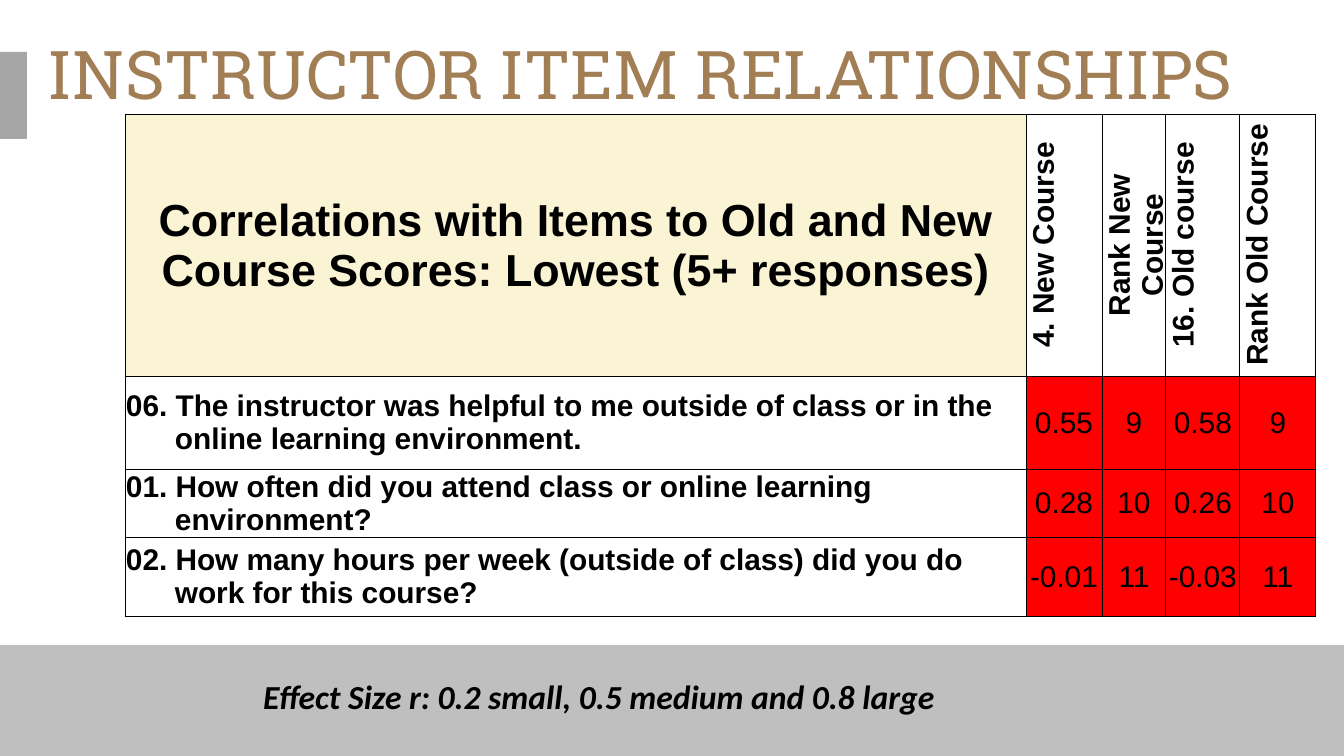
from dataclasses import dataclass

from lxml.etree import SubElement
from pptx import Presentation
from pptx.dml.color import RGBColor
from pptx.enum.shapes import MSO_SHAPE
from pptx.enum.text import MSO_ANCHOR, PP_ALIGN
from pptx.oxml import parse_xml
from pptx.oxml.ns import nsdecls, qn
from pptx.util import Emu, Pt

EMU_PER_PX = 6804
BLACK = RGBColor(0x00, 0x00, 0x00)
WHITE = RGBColor(0xFF, 0xFF, 0xFF)
RED = RGBColor(0xFF, 0x00, 0x00)
CREAM = RGBColor(0xFA, 0xF3, 0xD4)
BRONZE = RGBColor(0xA2, 0x7E, 0x55)
LIGHT_GREY = RGBColor(0xBF, 0xBF, 0xBF)
MID_GREY = RGBColor(0xA6, 0xA6, 0xA6)

COLUMN_WIDTHS = (901, 76, 64, 74, 76)
ROW_HEIGHTS = (262, 93, 68, 79)
ITEM_INDENT = 49
CELL_MARGIN = 1
TABLE_HEADING = "Correlations with Items to Old and New Course Scores: Lowest (5+ responses)"
SCORE_HEADINGS = ("4. New Course", "Rank New\vCourse", "16. Old course", "Rank Old Course")


@dataclass(frozen=True)
class Box:
    left: int
    top: int
    width: int
    height: int

    def lengths(self) -> tuple:
        return tuple(px(n) for n in (self.left, self.top, self.width, self.height))


@dataclass(frozen=True)
class SurveyItem:
    question: str
    scores: tuple


ITEMS = (
    SurveyItem("06. The instructor was helpful to me outside of class or in the "
               "online learning environment.", ("0.55", "9", "0.58", "9")),
    SurveyItem("01. How often did you attend class or online learning environment?",
               ("0.28", "10", "0.26", "10")),
    SurveyItem("02. How many hours per week (outside of class) did you do "
               "work for this course?", ("-0.01", "11", "-0.03", "11")),
)


def px(length: int) -> Emu:
    return Emu(length * EMU_PER_PX)


def write_text(frame, text: str, *, size: int, font: str = "Arial",
               color: RGBColor = BLACK, bold: bool = False, italic: bool = False,
               align=PP_ALIGN.LEFT, hanging: int = 0) -> None:
    frame.text = text
    paragraph = frame.paragraphs[0]
    paragraph.alignment = align
    if hanging:
        properties = paragraph._p.get_or_add_pPr()
        properties.set("marL", str(px(hanging)))
        properties.set("indent", str(-px(hanging)))
    for run in paragraph.runs:
        run.font.name = font
        run.font.size = Pt(size)
        run.font.bold = bold
        run.font.italic = italic
        run.font.color.rgb = color


def clear_margins(frame) -> None:
    frame.margin_left = frame.margin_right = 0
    frame.margin_top = frame.margin_bottom = 0


def add_bar(slide, box: Box, color: RGBColor) -> None:
    bar = slide.shapes.add_shape(MSO_SHAPE.RECTANGLE, *box.lengths())
    bar.shadow.inherit = False
    bar.fill.solid()
    bar.fill.fore_color.rgb = color
    bar.line.fill.background()


def add_borders(cell) -> None:
    properties = cell._tc.get_or_add_tcPr()
    for position, side in enumerate(("lnL", "lnR", "lnT", "lnB")):
        line = parse_xml(f'<a:{side} {nsdecls("a")} w="{Pt(0.5)}"/>')
        fill = SubElement(line, qn("a:solidFill"))
        SubElement(fill, qn("a:srgbClr"), val=str(BLACK))
        properties.insert(position, line)


def fill_cell(cell, text: str, fill: RGBColor, *, upward: bool = False, **text_format) -> None:
    cell.margin_left = cell.margin_right = cell.margin_top = px(CELL_MARGIN)
    cell.margin_bottom = 0
    cell.vertical_anchor = MSO_ANCHOR.MIDDLE
    cell.fill.solid()
    cell.fill.fore_color.rgb = fill
    if upward:
        cell._tc.get_or_add_tcPr().set("vert", "vert270")
    add_borders(cell)
    write_text(cell.text_frame, text, **text_format)


def add_correlation_table(slide) -> None:
    box = Box(125, 114, sum(COLUMN_WIDTHS), sum(ROW_HEIGHTS))
    table = slide.shapes.add_table(len(ROW_HEIGHTS), len(COLUMN_WIDTHS), *box.lengths()).table
    table.first_row = table.horz_banding = False
    for column, width in zip(table.columns, COLUMN_WIDTHS):
        column.width = px(width)
    for row, height in zip(table.rows, ROW_HEIGHTS):
        row.height = px(height)

    fill_cell(table.cell(0, 0), TABLE_HEADING, CREAM, size=24, bold=True, align=PP_ALIGN.CENTER)
    for column, heading in enumerate(SCORE_HEADINGS, start=1):
        fill_cell(table.cell(0, column), heading, WHITE, upward=True,
                  size=16, bold=True, align=PP_ALIGN.CENTER)
    for row, item in enumerate(ITEMS, start=1):
        fill_cell(table.cell(row, 0), item.question, WHITE,
                  size=16, bold=True, hanging=ITEM_INDENT)
        for column, score in enumerate(item.scores, start=1):
            fill_cell(table.cell(row, column), score, RED, size=16, align=PP_ALIGN.CENTER)


def add_title(slide, text: str) -> None:
    title = slide.shapes.title
    title.left, title.top, title.width, title.height = Box(48, 30, 1210, 85).lengths()
    frame = title.text_frame
    clear_margins(frame)
    frame.vertical_anchor = MSO_ANCHOR.MIDDLE
    write_text(frame, text, size=36, font="Roboto Slab", color=BRONZE)


def add_effect_size_note(slide) -> None:
    note = slide.shapes.add_textbox(*Box(250, 669, 708, 54).lengths())
    note.text_frame.word_wrap = False
    write_text(note.text_frame, "Effect Size r: 0.2 small, 0.5 medium and 0.8 large",
               size=18, font="Calibri", bold=True, italic=True)


def main() -> None:
    presentation = Presentation()
    presentation.slide_width, presentation.slide_height = px(1344), px(756)
    slide = presentation.slides.add_slide(presentation.slide_layouts[5])
    add_bar(slide, Box(0, 645, 1344, 111), LIGHT_GREY)
    add_bar(slide, Box(-4, 52, 31, 87), MID_GREY)
    add_title(slide, "INSTRUCTOR ITEM RELATIONSHIPS")
    add_correlation_table(slide)
    add_effect_size_note(slide)
    presentation.save("out.pptx")


if __name__ == "__main__":
    main()
